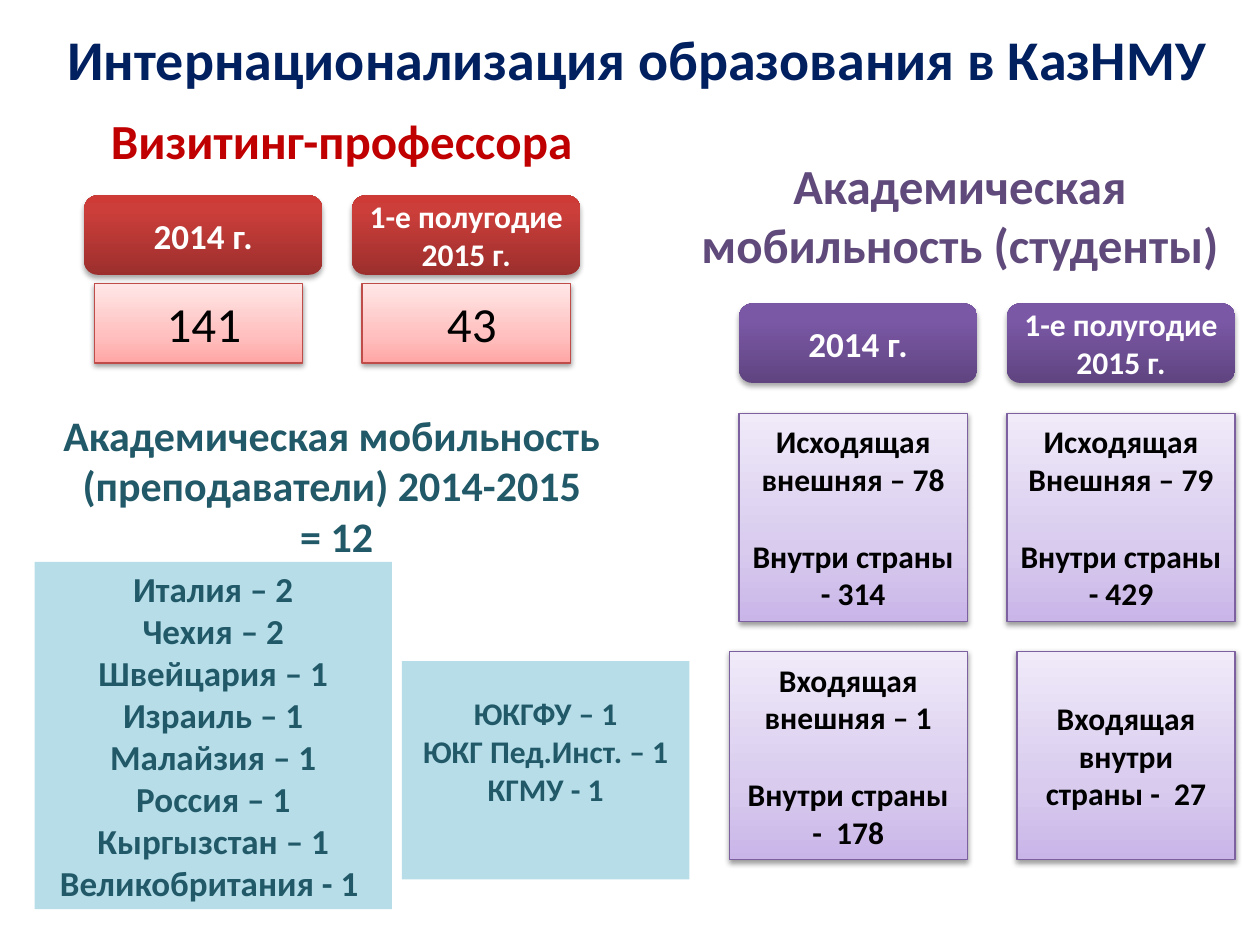
from copy import deepcopy
from dataclasses import dataclass
from typing import Optional

from lxml.etree import SubElement
from pptx import Presentation
from pptx.dml.color import RGBColor
from pptx.enum.shapes import MSO_SHAPE
from pptx.enum.text import MSO_ANCHOR, PP_ALIGN
from pptx.oxml.ns import qn
from pptx.util import Cm, Pt

FONT = "Calibri"
NAVY = RGBColor(0x00, 0x20, 0x60)
RED = RGBColor(0xC0, 0x00, 0x00)
PURPLE = RGBColor(0x60, 0x4A, 0x7B)
TEAL = RGBColor(0x21, 0x59, 0x68)
LIGHT_TEAL = RGBColor(0xB7, 0xDE, 0xE8)
RED_LINE = RGBColor(0xBF, 0x4C, 0x48)
PURPLE_LINE = RGBColor(0x7D, 0x60, 0xA0)
BLACK = RGBColor(0x00, 0x00, 0x00)
WHITE = RGBColor(0xFF, 0xFF, 0xFF)

# Gradient stops from bottom to top: (position, colour)
Stops = tuple[tuple[float, RGBColor], ...]
RED_HEADER: Stops = ((0, RGBColor(0x9C, 0x2F, 0x2D)), (0.8, RGBColor(0xCB, 0x3E, 0x3A)),
                     (1, RGBColor(0xCE, 0x3B, 0x37)))
PURPLE_HEADER: Stops = ((0, RGBColor(0x5F, 0x44, 0x80)), (0.8, RGBColor(0x7B, 0x58, 0xA6)),
                        (1, RGBColor(0x7C, 0x57, 0xA8)))
RED_CARD: Stops = ((0, RGBColor(0xFF, 0xA6, 0xA5)), (0.35, RGBColor(0xFF, 0xC0, 0xBF)),
                   (1, RGBColor(0xFF, 0xE7, 0xE7)))
PURPLE_CARD: Stops = ((0, RGBColor(0xC9, 0xB5, 0xE8)), (0.35, RGBColor(0xD8, 0xCB, 0xEE)),
                      (1, RGBColor(0xF0, 0xEA, 0xF9)))

HEADER_HEIGHT = 1.6
CARD_HEIGHT = 4.2
LINE_GAP = 22  # points, one line of 18 pt text


@dataclass
class Box:
    left: float
    top: float
    width: float
    height: float


@dataclass
class TextStyle:
    size: float
    color: RGBColor
    bold: bool = True
    gap: float = 0  # points between paragraphs


@dataclass
class BoxStyle:
    stops: Stops
    line: Optional[RGBColor]
    shadow_opacity: int
    shadow_distance: float
    preset: MSO_SHAPE = MSO_SHAPE.RECTANGLE


def place(shape, box: Box) -> None:
    shape.left, shape.top = Cm(box.left), Cm(box.top)
    shape.width, shape.height = Cm(box.width), Cm(box.height)


def write(shape, lines: list[str], style: TextStyle, anchor=MSO_ANCHOR.MIDDLE) -> None:
    frame = shape.text_frame
    frame.word_wrap = True
    frame.vertical_anchor = anchor
    frame.text = "\n".join(lines)
    for index, paragraph in enumerate(frame.paragraphs):
        paragraph.alignment = PP_ALIGN.CENTER
        if index and style.gap:
            paragraph.space_before = Pt(style.gap)
        paragraph.font.name = FONT
        paragraph.font.size = Pt(style.size)
        paragraph.font.bold = style.bold
        paragraph.font.color.rgb = style.color


def add_text(slide, box: Box, lines: list[str], style: TextStyle, anchor):
    shape = slide.shapes.add_textbox(0, 0, 0, 0)
    place(shape, box)
    write(shape, lines, style, anchor)
    return shape


def fill_gradient(shape, stops: Stops) -> None:
    shape.fill.gradient()
    shape.fill.gradient_angle = 90
    stop_list = shape._element.spPr.find(qn("a:gradFill")).find(qn("a:gsLst"))
    stop_list.insert(1, deepcopy(stop_list[0]))
    for stop, (position, color) in zip(shape.fill.gradient_stops, stops):
        stop.position = position
        stop.color.rgb = color


def add_shadow(shape, opacity: int, distance: float) -> None:
    effects = shape._element.spPr.find(qn("a:effectLst"))
    shadow = SubElement(effects, qn("a:outerShdw"), blurRad=str(Pt(3.1)),
                        dist=str(Pt(distance)), dir="5400000", rotWithShape="0")
    color = SubElement(shadow, qn("a:srgbClr"), val="000000")
    SubElement(color, qn("a:alpha"), val=str(opacity * 1000))


def add_gradient_box(slide, box: Box, lines: list[str], look: BoxStyle, style: TextStyle) -> None:
    shape = slide.shapes.add_shape(look.preset, 0, 0, 0, 0)
    place(shape, box)
    fill_gradient(shape, look.stops)
    if look.line is None:
        shape.line.fill.background()
    else:
        shape.line.color.rgb = look.line
        shape.line.width = Pt(0.75)
    shape.shadow.inherit = False
    add_shadow(shape, look.shadow_opacity, look.shadow_distance)
    write(shape, lines, style)


def add_headers(slide, left: float, top: float, stops: Stops) -> None:
    look = BoxStyle(stops, None, 35, 1.8, MSO_SHAPE.ROUNDED_RECTANGLE)
    add_gradient_box(slide, Box(left, top, 4.8, HEADER_HEIGHT), ["2014 г."],
                     look, TextStyle(20, WHITE))
    add_gradient_box(slide, Box(left + 5.4, top, 4.6, HEADER_HEIGHT),
                     ["1-е полугодие 2015 г."], look, TextStyle(18, WHITE))


def add_panel(slide, box: Box, lines: list[str], size: float):
    shape = slide.shapes.add_shape(MSO_SHAPE.RECTANGLE, 0, 0, 0, 0)
    place(shape, box)
    shape.fill.solid()
    shape.fill.fore_color.rgb = LIGHT_TEAL
    shape.line.fill.background()
    shape.shadow.inherit = False
    write(shape, lines, TextStyle(size, TEAL))
    return shape


def main() -> None:
    presentation = Presentation()
    presentation.slide_width, presentation.slide_height = Cm(25.4), Cm(19.05)
    slide = presentation.slides.add_slide(presentation.slide_layouts[5])

    # Title and section headings
    title = slide.shapes.title
    place(title, Box(0, 0, 25.7, 2.34))
    write(title, ["Интернационализация образования в КазНМУ"], TextStyle(32, NAVY))
    add_text(slide, Box(1.27, 1.93, 11.23, 1.6), ["Визитинг-профессора"],
             TextStyle(28, RED), MSO_ANCHOR.BOTTOM)
    add_text(slide, Box(13.3, 3.33, 12.1, 2.31), ["Академическая мобильность (студенты)"],
             TextStyle(28, PURPLE), MSO_ANCHOR.BOTTOM)

    # Visiting professors
    add_headers(slide, 1.7, 3.94, RED_HEADER)
    red_card = BoxStyle(RED_CARD, RED_LINE, 38, 1.6)
    for left, count in ((1.9, " 141"), (7.3, " 43")):
        add_gradient_box(slide, Box(left, 5.72, 4.2, HEADER_HEIGHT), [count],
                         red_card, TextStyle(28, BLACK, bold=False))

    # Student mobility
    add_headers(slide, 14.9, 6.12, PURPLE_HEADER)
    purple_card = BoxStyle(PURPLE_CARD, PURPLE_LINE, 38, 1.6)
    spaced = TextStyle(18, BLACK, gap=LINE_GAP)
    cards = [
        (14.9, 8.33, 4.6, ["Исходящая внешняя – 78", "Внутри страны - 314"], spaced),
        (20.3, 8.33, 4.6, ["Исходящая Внешняя – 79", "Внутри страны - 429"], spaced),
        (14.7, 13.13, 4.8, ["Входящая внешняя – 1", "Внутри страны -  178"], spaced),
        (20.5, 13.13, 4.4, ["Входящая", "внутри страны -  27"], TextStyle(18, BLACK)),
    ]
    for left, top, width, lines, style in cards:
        add_gradient_box(slide, Box(left, top, width, CARD_HEIGHT), lines, purple_card, style)

    # Teacher mobility
    add_text(slide, Box(0.9, 8.13, 11.58, 3.33),
             ["Академическая мобильность", " (преподаватели) 2014-2015 ", " = 12"],
             TextStyle(24, TEAL), MSO_ANCHOR.TOP)
    add_panel(slide, Box(0.7, 11.33, 7.2, 7),
              ["Италия – 2", "Чехия – 2", "Швейцария – 1", "Израиль – 1", "Малайзия – 1",
               "Россия – 1", "Кыргызстан – 1", "Великобритания - 1 "], 20)
    universities = add_panel(slide, Box(8.1, 13.33, 5.8, 4.4),
                             ["ЮКГФУ – 1", "ЮКГ Пед.Инст. – 1", "КГМУ - 1"], 18)
    universities.text_frame.margin_bottom = Cm(0.13) + Pt(LINE_GAP)

    presentation.save("out.pptx")


if __name__ == "__main__":
    main()
